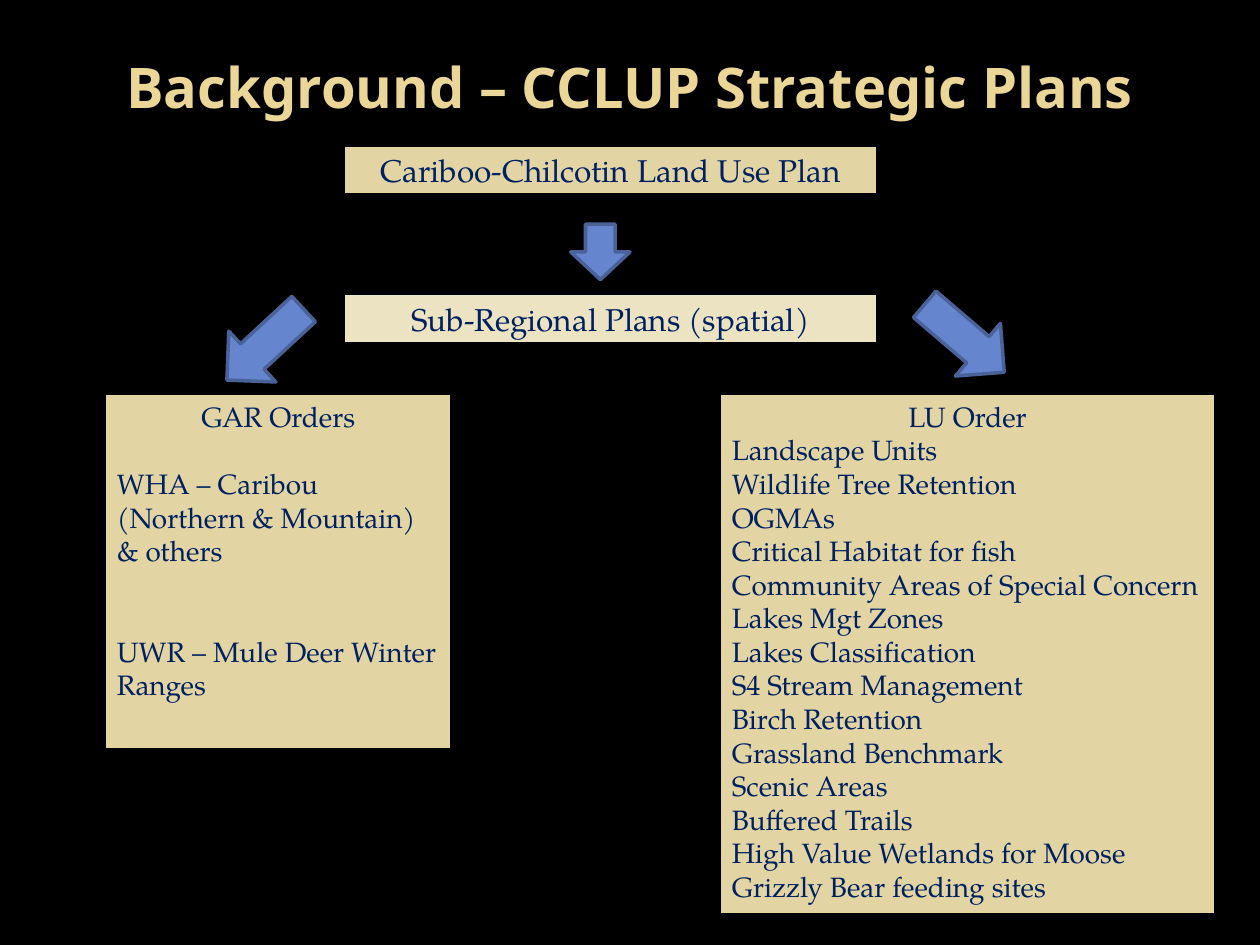
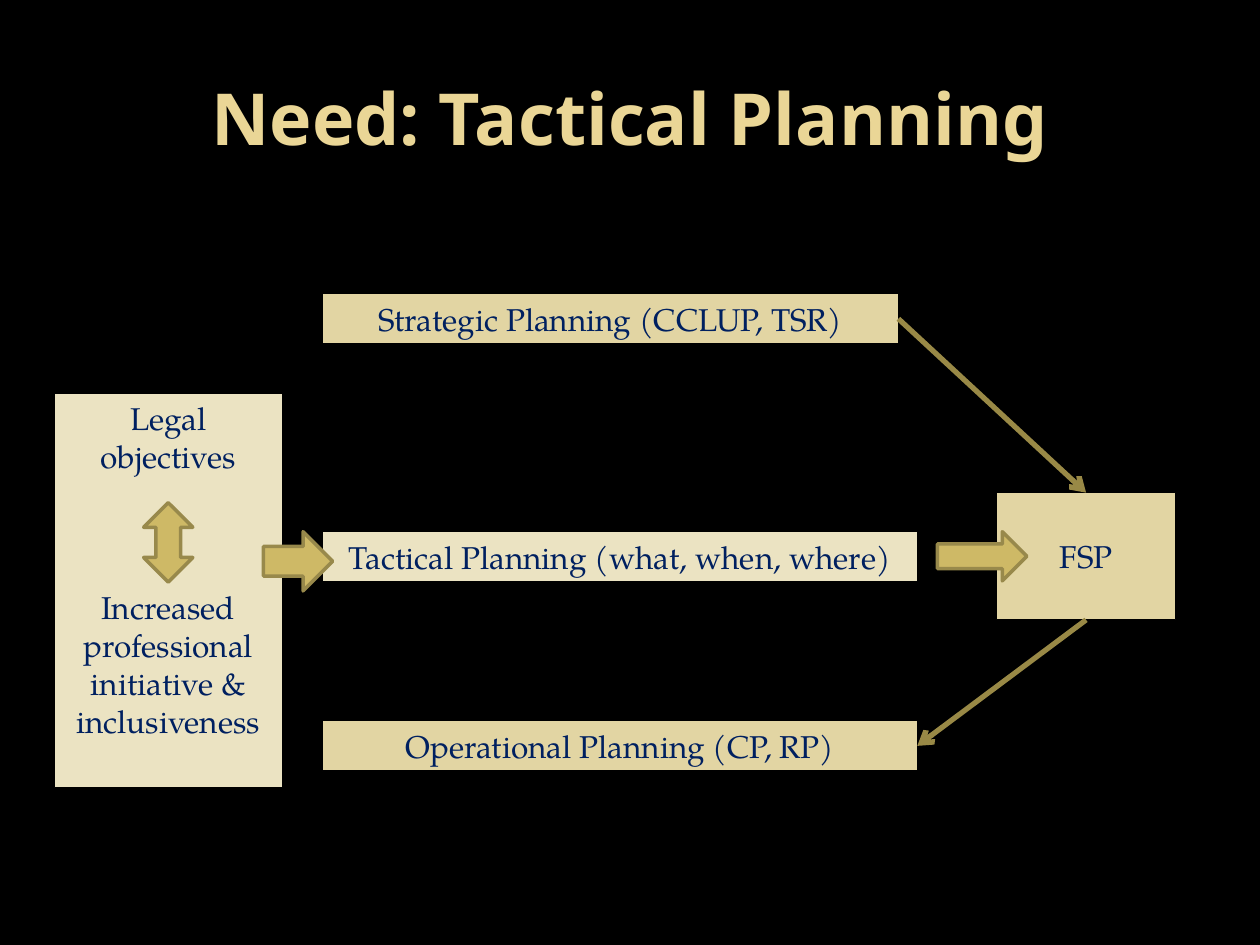
from dataclasses import dataclass

from lxml import etree
from pptx import Presentation, util as u
from pptx.dml.color import RGBColor
from pptx.enum import shapes, text
from pptx.oxml import ns


@dataclass(frozen=True)
class Theme:
    backdrop: str = "000000"
    title: str = "EAD696"
    ink: str = "002060"
    sand: str = "E2D5A3"
    pale: str = "EBE3C2"
    blue: str = "6585CF"
    blue_edge: str = "4B6299"
    gold: str = "CEB966"
    gold_edge: str = "98894B"
    link: str = "998946"
    title_font: str = "Noto Sans"
    body_font: str = "TeX Gyre Pagella"
    list_size: int = 16
    body_size: int = 18
    leading: float = 1.2


theme = Theme()
LEFT, CENTER = text.PP_ALIGN.LEFT, text.PP_ALIGN.CENTER
TOP, MIDDLE = text.MSO_ANCHOR.TOP, text.MSO_ANCHOR.MIDDLE
SHAPE = shapes.MSO_SHAPE

deck = Presentation()
deck.slide_width, deck.slide_height = u.Inches(10), u.Inches(7.5)
COLUMN, ROW = deck.slide_width / 100, deck.slide_height / 75
backdrop = deck.slide_master.background.fill
backdrop.solid()
backdrop.fore_color.rgb = RGBColor.from_string(theme.backdrop)


def write(box, *lines, size=theme.body_size, font=theme.body_font,
          color=theme.ink, bold=False, align=CENTER, anchor=TOP):
    """Each line is a string, or (string, alignment, blank lines above)."""
    frame = box.text_frame
    frame.word_wrap = True
    frame.auto_size = text.MSO_AUTO_SIZE.NONE
    frame.vertical_anchor = anchor
    for index, line in enumerate(lines):
        words, side, gap = (line, align, 0) if isinstance(line, str) else line
        para = frame.paragraphs[0] if index == 0 else frame.add_paragraph()
        para.alignment = side
        para.space_before = u.Pt(gap * size * theme.leading)
        span = para.add_run()
        span.text = words
        span.font.size, span.font.name, span.font.bold = u.Pt(size), font, bold
        span.font.color.rgb = RGBColor.from_string(color)


def add_block(page, kind, place, fill, edge, weight, turn=0):
    """Place is left, top, width, height in grid columns and rows."""
    left, top, width, height = place
    block = page.shapes.add_shape(kind, int(left * COLUMN), int(top * ROW),
                                  int(width * COLUMN), int(height * ROW))
    block.shadow.inherit = False
    block.fill.solid()
    block.fill.fore_color.rgb = RGBColor.from_string(fill)
    block.line.color.rgb = RGBColor.from_string(edge)
    block.line.width = u.Pt(weight)
    block.rotation = turn
    return block


pages = []
for heading, size, height in (
    ("Background – CCLUP Strategic Plans", 32, 7.7),
    ("Need: Tactical Planning", 41, 12.5),
):
    page = deck.slides.add_slide(deck.slide_layouts[5])
    title = page.shapes.title
    title.left, title.top = int(5 * COLUMN), int(3 * ROW)
    title.width, title.height = int(90 * COLUMN), int(height * ROW)
    write(title, heading, size=size, font=theme.title_font,
          color=theme.title, bold=True, anchor=MIDDLE)
    pages.append(page)
strategic_page, tactical_page = pages

# Strategic plans: two plans above two sets of orders
gar_lines = (
    "GAR Orders",
    ("WHA – Caribou (Northern & Mountain) & others", LEFT, 1),
    ("UWR – Mule Deer Winter Ranges", LEFT, 2),
)
lu_subjects = (
    "Landscape Units", "Wildlife Tree Retention", "OGMAs",
    "Critical Habitat for fish", "Community Areas of Special Concern",
    "Lakes Mgt Zones", "Lakes Classification", "S4 Stream Management",
    "Birch Retention", "Grassland Benchmark", "Scenic Areas",
    "Buffered Trails", "High Value Wetlands for Moose",
    "Grizzly Bear feeding sites",
)
lu_lines = ("LU Order", *((subject, LEFT, 0) for subject in lu_subjects))
for place, fill, size, lines in (
    ((8.3, 31.2, 27.6, 28.3), theme.sand, theme.list_size, gar_lines),
    ((57.1, 31.2, 39.4, 41.4), theme.sand, theme.list_size, lu_lines),
    ((27.2, 11.5, 42.5, 4), theme.sand, theme.body_size,
     ["Cariboo-Chilcotin Land Use Plan"]),
    ((27.2, 23.3, 42.5, 4), theme.pale, theme.body_size,
     ["Sub-Regional Plans (spatial)"]),
):
    box = add_block(strategic_page, SHAPE.RECTANGLE, place, fill,
                    theme.backdrop, 2.25)
    write(box, *lines, size=size)

for place, turn in (
    ((45.3, 17.8, 4.7, 4.4), 0),
    ((73.8, 22.7, 5.5, 8.3), 310.5),
    ((18.3, 23.2, 5.5, 8.3), 47.2),
):
    add_block(strategic_page, SHAPE.DOWN_ARROW, place, theme.blue,
              theme.blue_edge, 2, turn)

# Tactical planning: objectives feed the plans, the plans meet in the FSP
legal_lines = (
    "Legal objectives",
    ("Increased professional initiative & inclusiveness", CENTER, 3),
)
plan_boxes = {}
for name, place, fill, anchor, lines in (
    ("strategic", (25.6, 23.3, 45.7, 4), theme.sand, TOP,
     ["Strategic Planning (CCLUP, TSR)"]),
    ("operational", (25.6, 57.2, 47.2, 4), theme.sand, TOP,
     ["Operational Planning (CP, RP)"]),
    ("fsp", (79.1, 39.1, 14.2, 10.1), theme.sand, MIDDLE, ["FSP"]),
    ("tactical", (25.6, 42.2, 47.2, 4), theme.pale, TOP,
     ["Tactical Planning (what, when, where)"]),
    ("legal", (4.3, 31.2, 18.1, 31.3), theme.pale, TOP, legal_lines),
):
    box = add_block(tactical_page, SHAPE.RECTANGLE, place, fill,
                    theme.backdrop, 0.75)
    write(box, *lines, anchor=anchor)
    plan_boxes[name] = box

TOP_SITE, BOTTOM_SITE, RIGHT_SITE = 0, 2, 3
for start, start_site, end, end_site in (
    ("strategic", RIGHT_SITE, "fsp", TOP_SITE),
    ("fsp", BOTTOM_SITE, "operational", RIGHT_SITE),
):
    link = tactical_page.shapes.add_connector(
        shapes.MSO_CONNECTOR.STRAIGHT, 0, 0, 0, 0)
    link.begin_connect(plan_boxes[start], start_site)
    link.end_connect(plan_boxes[end], end_site)
    link.line.color.rgb = RGBColor.from_string(theme.link)
    link.line.width = u.Pt(3)
    etree.SubElement(link.line._get_or_add_ln(), ns.qn("a:tailEnd"), type="arrow")
    etree.SubElement(link._element.spPr, ns.qn("a:effectLst"))

for kind, place in (
    (SHAPE.UP_DOWN_ARROW, (11.4, 39.9, 3.9, 6.3)),
    (SHAPE.RIGHT_ARROW, (74.4, 42.2, 7.1, 3.9)),
    (SHAPE.RIGHT_ARROW, (20.9, 42.2, 5.5, 4.7)),
):
    add_block(tactical_page, kind, place, theme.gold, theme.gold_edge, 2)

deck.save("out.pptx")
